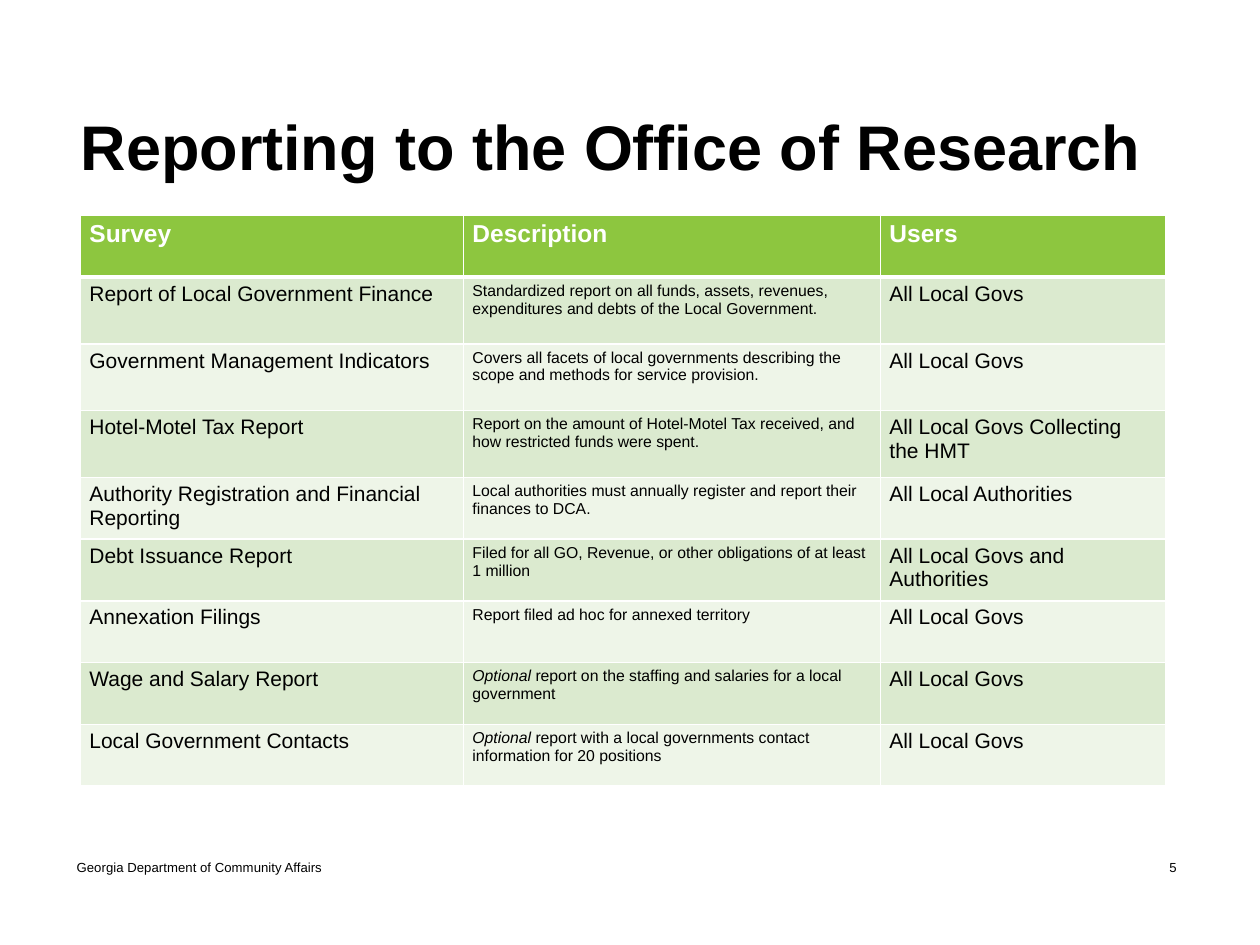
import pptx
import pptx.util
import pptx.dml.color
import pptx.enum.text
import pptx.oxml

Inches, Pt = pptx.util.Inches, pptx.util.Pt
Align, Anchor = pptx.enum.text.PP_ALIGN, pptx.enum.text.MSO_ANCHOR
NAMESPACE = "http://schemas.openxmlformats.org/drawingml/2006/main"


def color(hex_code):
    return pptx.dml.color.RGBColor.from_string(hex_code)


def write(para, text, ink="000000", **formats):
    span = para.add_run()
    span.text = text
    span.font.color.rgb = color(ink)
    for name, value in {"name": "Arial", "bold": False, **formats}.items():
        setattr(span.font, name, value)


deck = pptx.Presentation()
deck.slide_width, deck.slide_height = Inches(10), Inches(7.5)
page = deck.slides.add_slide(deck.slide_layouts[5])

# Title
title = page.shapes.title
place = {"left": 0.54, "top": 0.57, "width": 8.93, "height": 1.25}
for name, value in place.items():
    setattr(title, name, Inches(value))
frame = title.text_frame
frame_formats = {"word_wrap": True, "vertical_anchor": Anchor.MIDDLE,
                 "auto_size": pptx.enum.text.MSO_AUTO_SIZE.NONE}
for name, value in frame_formats.items():
    setattr(frame, name, value)
para = frame.paragraphs[0]
para.alignment, para.line_spacing = Align.LEFT, 0.9
write(para, "Reporting to the Office of Research", size=Pt(36), bold=True)

# Survey table: an asterisk pair marks the italic opening word
rows = [
    ("Survey", "Description", "Users"),
    ("Report of Local Government Finance",
     "Standardized report on all funds, assets, revenues, expenditures and debts of the Local Government.",
     "All Local Govs"),
    ("Government Management Indicators",
     "Covers all facets of local governments describing the scope and methods for service provision.",
     "All Local Govs"),
    ("Hotel-Motel Tax Report",
     "Report on the amount of Hotel-Motel Tax received, and how restricted funds were spent.",
     "All Local Govs Collecting the HMT"),
    ("Authority Registration and Financial Reporting",
     "Local authorities must annually register and report their finances to DCA.",
     "All Local Authorities"),
    ("Debt Issuance Report",
     "Filed for all GO, Revenue, or other obligations of at least 1 million",
     "All Local Govs and Authorities"),
    ("Annexation Filings", "Report filed ad hoc for annexed territory", "All Local Govs"),
    ("Wage and Salary Report",
     "*Optional *report on the staffing and salaries for a local government",
     "All Local Govs"),
    ("Local Government Contacts",
     "*Optional *report with a local governments contact information for 20 positions",
     "All Local Govs"),
]
column_widths = [3.04, 3.31, 2.26]
row_heights = [0.49] + [0.53] * 3 + [0.49] * 5
body_sizes = [12, 9, 12]
margins = {"margin_left": 0.07, "margin_right": 0.07,
           "margin_top": 0.04, "margin_bottom": 0.04}

table = page.shapes.add_table(
    len(rows), len(column_widths), Inches(0.64), Inches(1.71),
    Inches(sum(column_widths)), Inches(sum(row_heights))).table
table.horz_banding = False
for column, width in zip(table.columns, column_widths):
    column.width = Inches(width)
for row, height in zip(table.rows, row_heights):
    row.height = Inches(height)

for r, texts in enumerate(rows):
    header = r == 0
    fill = "8DC63F" if header else ("DBEACF" if r % 2 else "EEF5E8")
    for c, text in enumerate(texts):
        cell = table.cell(r, c)
        for name, value in margins.items():
            setattr(cell, name, Inches(value))

        # White borders, heavier between header and body
        thick_side = {0: "B", 1: "T"}.get(r)
        for side in "LRTB":
            width = Pt(3 if side == thick_side else 1)
            cell._tc.get_or_add_tcPr().append(pptx.oxml.parse_xml(
                f'<a:ln{side} xmlns:a="{NAMESPACE}" w="{width}"><a:solidFill>'
                f'<a:srgbClr val="FFFFFF"/></a:solidFill></a:ln{side}>'))
        cell.fill.solid()
        cell.fill.fore_color.rgb = color(fill)

        for part, words in enumerate(text.split("*")):
            if words:
                write(cell.text_frame.paragraphs[0], words,
                      ink="FFFFFF" if header else "000000",
                      size=Pt(14 if header else body_sizes[c]),
                      bold=header, italic=part == 1)

# Footer and page number
footers = [
    ("Georgia Department of Community Affairs", (0.51, 6.68, 3.38, 0.4), Align.LEFT),
    ("5", (9.06, 6.51, 0.5, 0.74), Align.CENTER),
]
for text, area, alignment in footers:
    box = page.shapes.add_textbox(*map(Inches, area))
    for name, value in frame_formats.items():
        setattr(box.text_frame, name, value)
    para = box.text_frame.paragraphs[0]
    para.alignment = alignment
    write(para, text, size=Pt(7.5))

deck.save("out.pptx")
